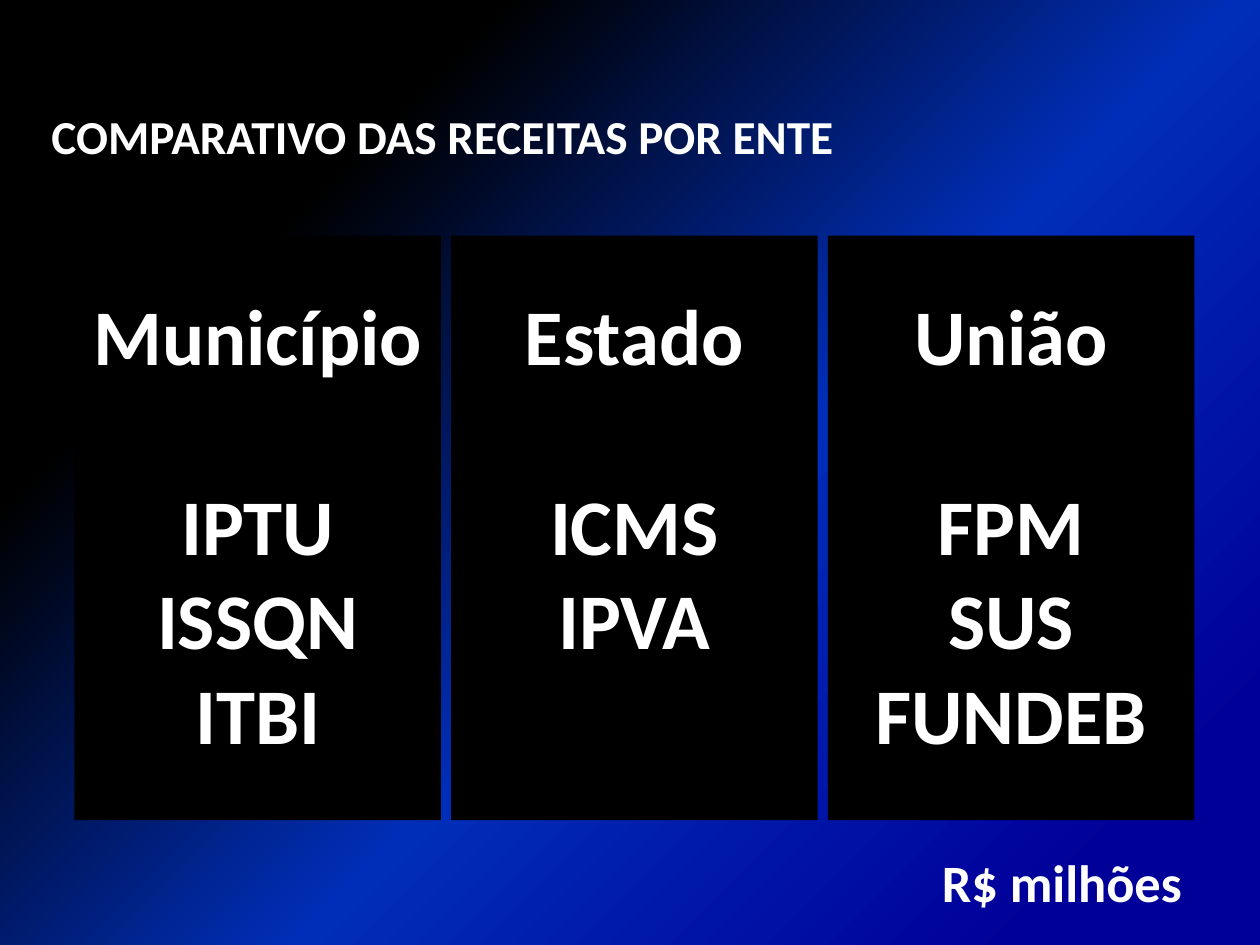
from copy import deepcopy

from pptx import Presentation
from pptx.dml.color import RGBColor
from pptx.enum.shapes import MSO_SHAPE as Shape
from pptx.enum.text import MSO_ANCHOR as Anchor, PP_ALIGN as Align
from pptx.oxml.ns import qn
from pptx.util import Inches, Pt

TITLE = "COMPARATIVO DAS RECEITAS POR ENTE"
UNIT = "R$ milhões"
REVENUES = {
    "Município": ["IPTU", "ISSQN", "ITBI"],
    "Estado": ["ICMS", "IPVA"],
    "União": ["FPM", "SUS", "FUNDEB"],
}
BACKDROP = [(0.23, "000000"), (0.56, "002EB8"), (0.89, "000099")]
LEFT, TOP, WIDTH, HEIGHT, GAP = 0.59, 1.87, 2.91, 4.64, 0.08


def color(code):
    return RGBColor.from_string(code)


def write(frame, lines, size, align=Align.LEFT, anchor=Anchor.MIDDLE, heading_gap=0):
    frame.word_wrap = True
    frame.vertical_anchor = anchor
    for index, line in enumerate(lines):
        paragraph = frame.add_paragraph() if index else frame.paragraphs[0]
        paragraph.alignment = align
        if index == 0:
            paragraph.space_after = Pt(heading_gap)
        run = paragraph.add_run()
        run.text = line
        run.font.name = "Calibri"
        run.font.size = Pt(size)
        run.font.bold = True
        run.font.color.rgb = color("FFFFFF")


def paint_backdrop(slide):
    fill = slide.background.fill
    fill.gradient()
    fill.gradient_angle = 315
    stop_list = slide.element.find(".//" + qn("a:gsLst"))
    stop_list.append(deepcopy(stop_list[0]))
    for stop, (position, code) in zip(fill.gradient_stops, BACKDROP):
        stop.position = position
        stop.color.rgb = color(code)


def add_panel(slide, column, entity, taxes):
    left = LEFT + column * (WIDTH + GAP)
    panel = slide.shapes.add_shape(
        Shape.RECTANGLE, Inches(left), Inches(TOP), Inches(WIDTH), Inches(HEIGHT)
    )
    panel.shadow.inherit = False
    panel.fill.solid()
    panel.fill.fore_color.rgb = color("000000")
    panel.line.fill.background()
    panel.text_frame.margin_top = Inches(0.41)
    write(panel.text_frame, [entity, *taxes], 45, align=Align.CENTER,
          anchor=Anchor.TOP, heading_gap=54)


def add_label(slide, text, box, size, **text_format):
    label = slide.shapes.add_textbox(*map(Inches, box))
    write(label.text_frame, [text], size, **text_format)


def main():
    deck = Presentation()
    deck.slide_width, deck.slide_height = Inches(10), Inches(7.5)
    slide = deck.slides.add_slide(deck.slide_layouts[6])
    paint_backdrop(slide)
    for column, (entity, taxes) in enumerate(REVENUES.items()):
        add_panel(slide, column, entity, taxes)
    add_label(slide, UNIT, (5.39, 6.63, 4.09, 0.74), 30, align=Align.RIGHT)
    add_label(slide, TITLE, (0.31, 0.68, 7.05, 0.79), 27)
    deck.save("out.pptx")


if __name__ == "__main__":
    main()
